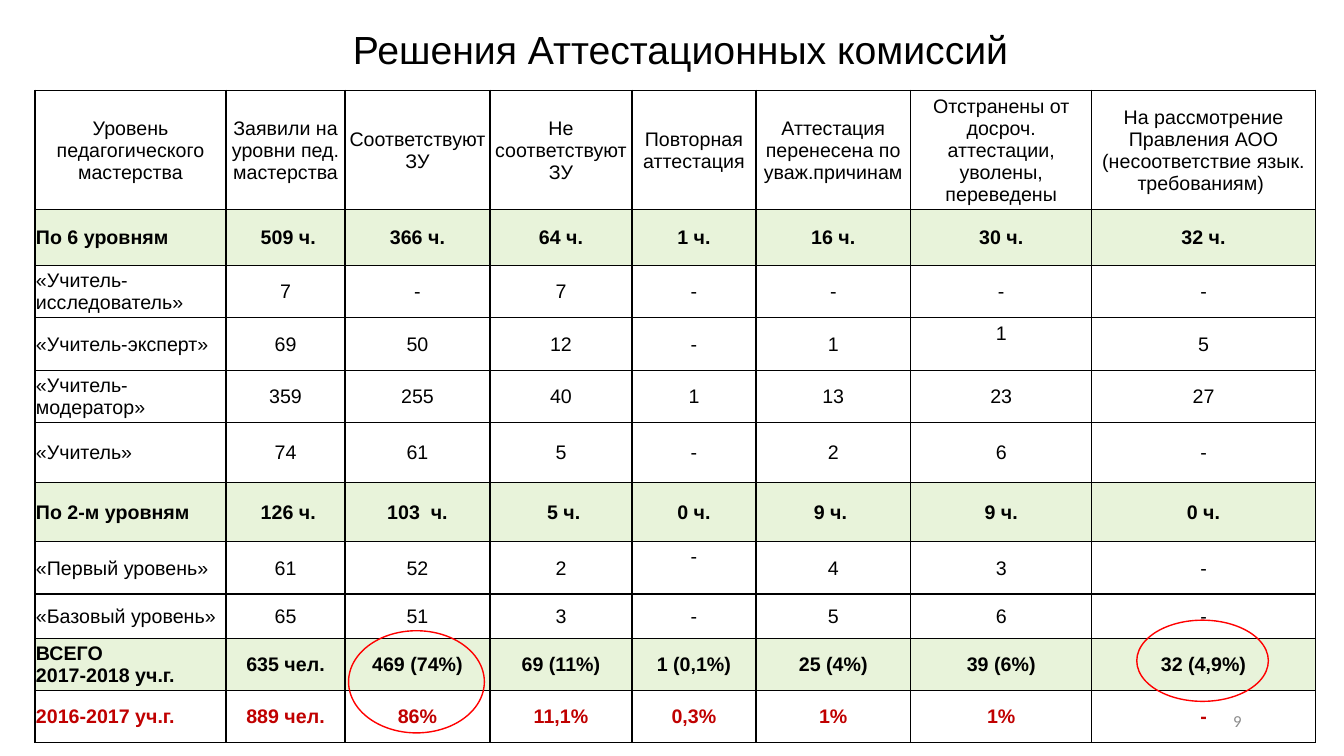
from lxml import etree
from pptx import Presentation
from pptx.dml.color import RGBColor
from pptx.enum.shapes import MSO_SHAPE
from pptx.enum.text import MSO_ANCHOR, PP_ALIGN
from pptx.oxml.ns import qn
from pptx.util import Pt

LEFT, CENTER, RIGHT = PP_ALIGN.LEFT, PP_ALIGN.CENTER, PP_ALIGN.RIGHT
MIDDLE = MSO_ANCHOR.MIDDLE
OVAL = MSO_SHAPE.OVAL

TITLE = "Решения Аттестационных комиссий"
PAGE = "9"

# (kind of row, height, cells)
ROWS = [
    ("header", 85, ["Уровень педагогического мастерства",
                    "Заявили на уровни пед. мастерства",
                    "Соответствуют ЗУ",
                    "Не соответствуют ЗУ",
                    "Повторная аттестация",
                    "Аттестация перенесена по уваж.причинам",
                    "Отстранены от досроч. аттестации, уволены, переведены",
                    "На рассмотрение Правления АОО (несоответствие язык.\nтребованиям) "]),
    ("sum", 40, ["По 6 уровням", " 509 ч.", "366 ч.", "64 ч.", "1 ч.", "16 ч.", "30 ч.", "32 ч."]),
    ("level", 37.5, ["«Учитель-исследователь»", "7", "-", "7", "-", "-", "-", "-"]),
    ("level", 37.5, ["«Учитель-эксперт»", "69", "50", "12", "-", "1", "1", "5"]),
    ("level", 37.5, ["«Учитель-модератор»", "359", "255", "40", "1", "13", "23", "27"]),
    ("level", 42.5, ["«Учитель»", "74", "61", "5", "-", "2", "6", "-"]),
    ("sum", 42.5, ["По 2-м уровням", " 126 ч.", "103  ч.", " 5 ч.", "0 ч.", "9 ч. ", "9 ч.", "0 ч."]),
    ("level", 37.5, ["«Первый уровень»", "61", "52", "2", "-", "4", "3", "-"]),
    ("level", 31.5, ["«Базовый уровень»", "65", "51", "3", "-", "5", "6", "-"]),
    ("sum", 37.5, ["ВСЕГО\n2017-2018 уч.г.", "635 чел.", "469 (74%)", "69 (11%)",
                   "1 (0,1%)", "25 (4%)", "39 (6%)", "32 (4,9%)"]),
    ("past", 37, ["2016-2017 уч.г.", "889 чел.", "86%", "11,1%", "0,3%", "1%", "1%", "-"]),
]
COL_WIDTHS = [136.5, 85, 103.5, 101.5, 88.5, 110.5, 129.5, 159.5]
RAISED_CELLS = {(3, 6), (7, 4)}
RINGS = [(812, 443, 94, 58), (249, 450.5, 97, 73)]

THEME = {
    "font": "Arial", "page_font": "Calibri",
    "title_size": 28, "cell_size": 14, "page_size": 12,
    "ink": "000000", "past": "C00000", "page": "8C8C8C",
    "sum_fill": "E8F3DA", "fill": "FFFFFF", "ring": "FF0000",
}


def rgb(name):
    return RGBColor.from_string(THEME[name])


def write(tf, text, size="cell_size", color="ink", font="font", bold=False,
          align=CENTER, spacing=None):
    for i, line in enumerate(text.split("\n")):
        p = tf.paragraphs[0] if i == 0 else tf.add_paragraph()
        p.alignment = align
        if spacing:
            p.line_spacing = spacing
        r = p.add_run()
        r.text = line
        r.font.name = THEME[font]
        r.font.size = Pt(THEME[size])
        r.font.bold = bold
        r.font.color.rgb = rgb(color)


def add_borders(cell):
    tc_pr = cell._tc.get_or_add_tcPr()
    for side in ("a:lnL", "a:lnR", "a:lnT", "a:lnB"):
        ln = etree.SubElement(tc_pr, qn(side), w=str(Pt(1)))
        fill = etree.SubElement(ln, qn("a:solidFill"))
        etree.SubElement(fill, qn("a:srgbClr"), val=THEME["ink"])


def add_title(s):
    sp = s.shapes.title
    sp.left, sp.top, sp.width, sp.height = Pt(104.5), Pt(18), Pt(763), Pt(38)
    sp.text_frame.vertical_anchor = MIDDLE
    write(sp.text_frame, TITLE, size="title_size", spacing=0.9)


def add_results(s):
    heights = [height for _, height, _ in ROWS]
    table = s.shapes.add_table(len(ROWS), len(COL_WIDTHS), Pt(25), Pt(64.5),
                               Pt(sum(COL_WIDTHS)), Pt(sum(heights))).table
    table.first_row = table.horz_banding = False
    for column, width in zip(table.columns, COL_WIDTHS):
        column.width = Pt(width)
    for i, (kind, height, texts) in enumerate(ROWS):
        table.rows[i].height = Pt(height)
        for j, text in enumerate(texts):
            cell = table.cell(i, j)
            cell.vertical_anchor = MIDDLE
            cell.margin_left = cell.margin_right = cell.margin_top = Pt(0.7)
            cell.margin_bottom = Pt(16 if (i, j) in RAISED_CELLS else 0)
            add_borders(cell)
            cell.fill.solid()
            cell.fill.fore_color.rgb = rgb("sum_fill" if kind == "sum" else "fill")
            write(cell.text_frame, text,
                  color="past" if kind == "past" else "ink",
                  bold=kind in ("sum", "past"),
                  align=LEFT if j == 0 and kind != "header" else CENTER)


def add_page_number(s):
    tf = s.shapes.add_textbox(Pt(678), Pt(500.5), Pt(216), Pt(29)).text_frame
    tf.word_wrap = True
    tf.vertical_anchor = MIDDLE
    write(tf, PAGE, size="page_size", color="page", font="page_font", align=RIGHT)


def add_ring(s, box):
    sp = s.shapes.add_shape(OVAL, *map(Pt, box))
    sp.shadow.inherit = False
    sp.fill.background()
    sp.line.color.rgb = rgb("ring")
    sp.line.width = Pt(1)


def main():
    prs = Presentation()
    prs.slide_width, prs.slide_height = Pt(960), Pt(540)
    s = prs.slides.add_slide(prs.slide_layouts[5])
    add_title(s)
    add_results(s)
    add_page_number(s)
    for box in RINGS:
        add_ring(s, box)
    prs.save("out.pptx")


if __name__ == "__main__":
    main()
